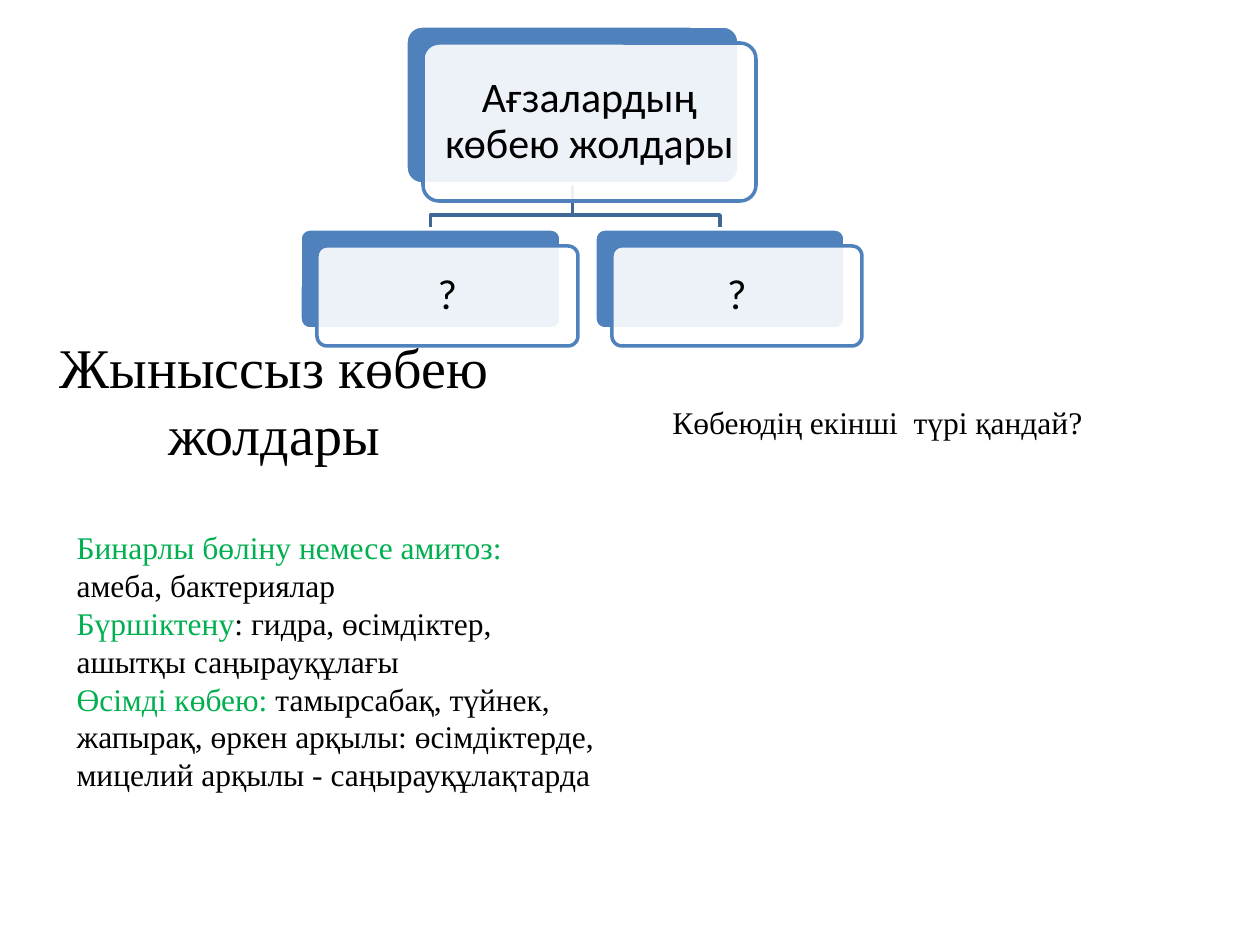
from lxml import etree
from pptx import Presentation
from pptx.dml.color import RGBColor
from pptx.enum.shapes import MSO_SHAPE
from pptx.enum.text import MSO_ANCHOR, MSO_AUTO_SIZE, PP_ALIGN
from pptx.oxml.ns import qn
from pptx.util import Pt

ROUND = MSO_SHAPE.ROUNDED_RECTANGLE
MIDDLE, TOP = MSO_ANCHOR.MIDDLE, MSO_ANCHOR.TOP
CENTER, LEFT = PP_ALIGN.CENTER, PP_ALIGN.LEFT
NOFIT = MSO_AUTO_SIZE.NONE

BLACK = RGBColor(0, 0, 0)
WHITE = RGBColor(255, 255, 255)
GREEN = RGBColor(0x00, 0xB0, 0x50)
BLUE = RGBColor(0x4F, 0x81, 0xBD)
STEEL = RGBColor(0x3F, 0x67, 0x97)
SANS, SERIF = "Calibri", "Times New Roman"

ROOT = ("Ағзалардың көбею жолдары", (406, 26, 333, 158))
KIDS = [
    ("?", (300, 229, 261, 100)),
    ("?", (595, 229, 250, 100)),
]
TITLE = ("Жыныссыз көбею жолдары", (35, 365, 478, 69))
ASK = ("Көбеюдің екінші  түрі қандай?", (660, 397, 440, 50))
LIST_BOX = (64, 522, 556, 280)
LIST = [
    [("Бинарлы бөліну немесе амитоз:", GREEN)],
    [("амеба, бактериялар", BLACK)],
    [("Бүршіктену", GREEN), (": гидра, өсімдіктер, ашытқы саңырауқұлағы", BLACK)],
    [("Өсімді көбею: ", GREEN),
     ("тамырсабақ, түйнек, жапырақ, өркен арқылы: өсімдіктерде,", BLACK)],
    [("мицелий арқылы - саңырауқұлақтарда", BLACK)],
]
SHIFT = 17
BEND = 14
PAD = 12
SCALE = 914400 / 126


def px(n):
    return round(n * SCALE)


def put(item, **kw):
    for key, val in kw.items():
        setattr(item, key, val)


def place(shape, box):
    put(shape, **dict(zip(("left", "top", "width", "height"), map(px, box))))


def write(para, runs, size, face, **kw):
    put(para, **kw)
    for text, color in runs:
        run = para.add_run()
        run.text = text
        put(run.font, size=Pt(size), name=face)
        run.font.color.rgb = color


def card(box, fill, edge):
    shape = slide.shapes.add_shape(ROUND, *map(px, box))
    shape.shadow.inherit = False
    shape.adjustments[0] = 0.1
    shape.fill.solid()
    shape.fill.fore_color.rgb = fill
    shape.line.color.rgb = edge
    shape.line.width = Pt(2)
    return shape


def node(text, box):
    x, y, w, h = box
    card(box, BLUE, WHITE)
    front = card((x + SHIFT, y + SHIFT, w, h), WHITE, BLUE)
    tint = front.fill._xPr.find(qn("a:solidFill"))[0]
    etree.SubElement(tint, qn("a:alpha"), val="90000")
    frame = front.text_frame
    put(frame, word_wrap=True, vertical_anchor=MIDDLE,
        margin_left=px(PAD), margin_right=px(PAD),
        margin_top=px(PAD), margin_bottom=px(PAD))
    write(frame.paragraphs[0], [(text, BLACK)], 24, SANS,
          alignment=CENTER, line_spacing=0.9)


def branch(top, kid):
    x, y, w, h = top
    start, foot = x + w / 2, y + h
    end = kid[0] + kid[2] / 2
    turn = kid[1] - BEND
    pen = slide.shapes.build_freeform(px(start), px(foot))
    pen.add_line_segments(
        [(px(a), px(b)) for a, b in ((start, turn), (end, turn), (end, kid[1]))],
        close=False)
    line = pen.convert_to_shape()
    line.shadow.inherit = False
    line.fill.background()
    line.line.color.rgb = STEEL
    line.line.width = Pt(2)


deck = Presentation()
deck.slide_width, deck.slide_height = px(1260), px(945)
slide = deck.slides.add_slide(deck.slide_layouts[0])
title, body = slide.placeholders

for text, box in KIDS:
    branch(ROOT[1], box)
for text, box in [ROOT] + KIDS:
    node(text, box)

place(title, TITLE[1])
put(title.text_frame, auto_size=NOFIT, word_wrap=True, vertical_anchor=MIDDLE)
write(title.text_frame.paragraphs[0], [(TITLE[0], BLACK)], 32, SERIF, alignment=CENTER)

place(body, LIST_BOX)
frame = body.text_frame
put(frame, auto_size=NOFIT, word_wrap=True, vertical_anchor=TOP)
for i, runs in enumerate(LIST):
    para = frame.add_paragraph() if i else frame.paragraphs[0]
    write(para, runs, 18, SERIF, alignment=LEFT, space_before=Pt(0))

ask = slide.shapes.add_textbox(*map(px, ASK[1]))
ask.text_frame.word_wrap = False
write(ask.text_frame.paragraphs[0], [(ASK[0], BLACK)], 18, SERIF)

deck.save("out.pptx")
